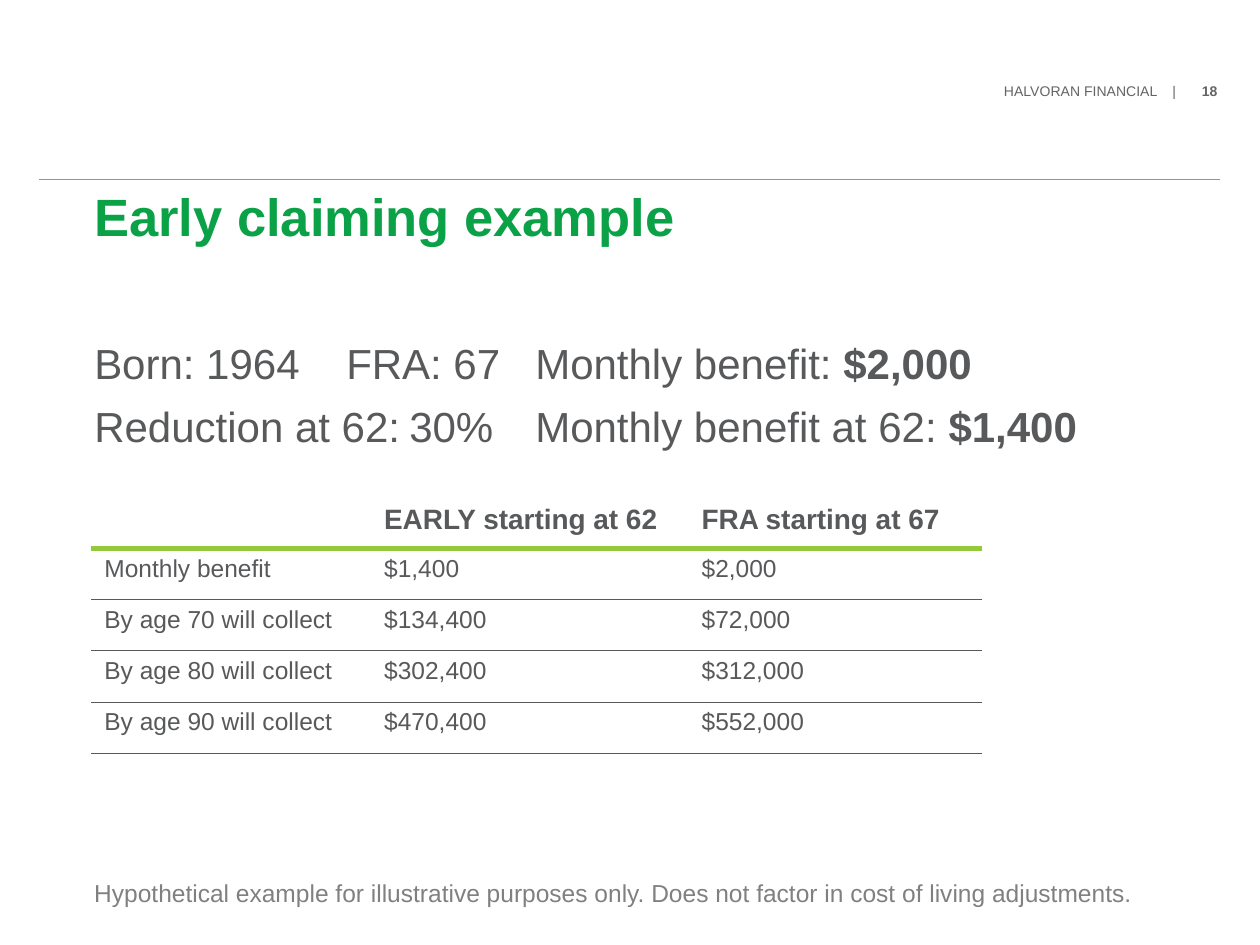
import pptx
import pptx.dml.color
import pptx.enum.shapes
import pptx.enum.text
import pptx.oxml
import pptx.oxml.ns
import pptx.util

Cm = pptx.util.Cm
Pt = pptx.util.Pt

COLORS = {
    "title": "0AA147",
    "text": "58595B",
    "note": "808080",
    "footer": "636466",
    "rule": "929497",
    "accent": "95C93C",
    "white": "FFFFFF",
}
NS = pptx.oxml.ns.nsdecls("a")


def rgb(name):
    return pptx.dml.color.RGBColor.from_string(COLORS[name])


def add_run(paragraph, text, size=14, color="text", bold=False, font="Arial"):
    run = paragraph.add_run()
    run.text = text
    run.font.name = font
    run.font.size = Pt(size)
    run.font.bold = bold
    run.font.color.rgb = rgb(color)


class SlideBuilder:
    def __init__(self, slide):
        self.slide = slide

    def prepare_frame(self, shape, box, top_inset=0):
        shape.left, shape.top, shape.width, shape.height = map(Cm, box)
        frame = shape.text_frame
        frame.margin_left = frame.margin_right = frame.margin_bottom = 0
        frame.margin_top = Cm(top_inset)
        frame.word_wrap = True
        frame.auto_size = pptx.enum.text.MSO_AUTO_SIZE.NONE
        frame.vertical_anchor = pptx.enum.text.MSO_ANCHOR.TOP
        return frame

    def set_tabs(self, paragraph, stops):
        tabs = "".join(f'<a:tab pos="{Cm(stop)}" algn="l"/>' for stop in stops)
        paragraph._p.get_or_add_pPr().append(
            pptx.oxml.parse_xml(f"<a:tabLst {NS}>{tabs}</a:tabLst>"))

    def title(self, text, box):
        heading = self.prepare_frame(self.slide.shapes.title, box).paragraphs[0]
        heading.alignment = pptx.enum.text.PP_ALIGN.LEFT
        heading.line_spacing = Pt(31)
        add_run(heading, text, size=30, color="title", bold=True)

    def body(self, facts, box, stops):
        frame = self.prepare_frame(self.slide.placeholders[1], box)
        for index, (label, amount) in enumerate(facts):
            fact = frame.add_paragraph() if index else frame.paragraphs[0]
            properties = fact._p.get_or_add_pPr()
            properties.set("marL", "0")
            properties.set("indent", "0")
            properties.append(pptx.oxml.parse_xml(f"<a:buNone {NS}/>"))
            self.set_tabs(fact, stops)
            fact.line_spacing = Pt(26)
            fact.space_before = Pt(10 if index else 0)
            add_run(fact, label, size=24)
            add_run(fact, amount, size=24, bold=True)

    def text(self, box, top_inset=0):
        shape = self.slide.shapes.add_textbox(*map(Cm, box))
        return self.prepare_frame(shape, box, top_inset).paragraphs[0]

    def rule(self, left, right, top):
        line = self.slide.shapes.add_connector(
            pptx.enum.shapes.MSO_CONNECTOR.STRAIGHT,
            Cm(left), Cm(top), Cm(right), Cm(top))
        line.line.color.rgb = rgb("rule")
        line.line.width = Pt(0.5)
        line._element.spPr.append(pptx.oxml.parse_xml(f"<a:effectLst {NS}/>"))

    def border(self, cell, side, color, width):
        cell._tc.get_or_add_tcPr().append(pptx.oxml.parse_xml(
            f'<a:ln{side} {NS} w="{Pt(width)}"><a:solidFill>'
            f'<a:srgbClr val="{COLORS[color]}"/></a:solidFill></a:ln{side}>'))

    def table(self, rows, left, top, widths, row_height):
        table = self.slide.shapes.add_table(
            len(rows), len(widths), Cm(left), Cm(top),
            Cm(sum(widths)), Cm(row_height * len(rows))).table
        table.first_row = table.horz_banding = False
        for column, width in zip(table.columns, widths):
            column.width = Cm(width)
        edges = [("white", 1), ("accent", 3)] + [("text", 0.5)] * (len(rows) - 1)
        for r, values in enumerate(rows):
            table.rows[r].height = Cm(row_height)
            for c, value in enumerate(values):
                cell = table.cell(r, c)
                for side, edge in (("L", edges[0]), ("R", edges[0]),
                                   ("T", edges[r]), ("B", edges[r + 1])):
                    self.border(cell, side, *edge)
                cell.fill.background()
                if value:
                    add_run(cell.text_frame.paragraphs[0], value,
                            size=14 if r else 16, bold=r == 0)


def main():
    deck = pptx.Presentation()
    deck.slide_width, deck.slide_height = Cm(25.4), Cm(19.05)
    builder = SlideBuilder(deck.slides.add_slide(deck.slide_layouts[1]))

    footer = builder.text((20.24, 1.63, 4.42, 0.38), top_inset=0.03)
    builder.set_tabs(footer, [3.99])
    add_run(footer, "HALVORAN FINANCIAL    |\t", size=8, color="footer")
    add_run(footer, "18", size=8, color="footer", bold=True)
    builder.rule(0.79, 24.59, 3.61)

    builder.title("Early claiming example", (1.9, 3.89, 21.59, 2.67))
    builder.body([
        ("Born: 1964\tFRA: 67\tMonthly benefit: ", "$2,000"),
        ("Reduction at 62:\t30%\tMonthly benefit at 62: ", "$1,400"),
    ], (1.9, 6.91, 21.59, 11.4), [5.08, 7.62, 10.16])

    note = builder.text((1.9, 17.7, 22.02, 0.61))
    add_run(note, "Hypothetical example for illustrative purposes only. "
            "Does not factor in cost of living adjustments.", color="note")

    builder.table([
        ("", "EARLY starting at 62", "FRA starting at 67"),
        ("Monthly benefit", "$1,400", "$2,000"),
        ("By age 70 will collect", "$134,400", "$72,000"),
        ("By age 80 will collect", "$302,400", "$312,000"),
        ("By age 90 will collect", "$470,400", "$552,000"),
    ], 1.85, 10.03, [5.64, 6.4, 5.89], 1.03)

    deck.save("out.pptx")


if __name__ == "__main__":
    main()
